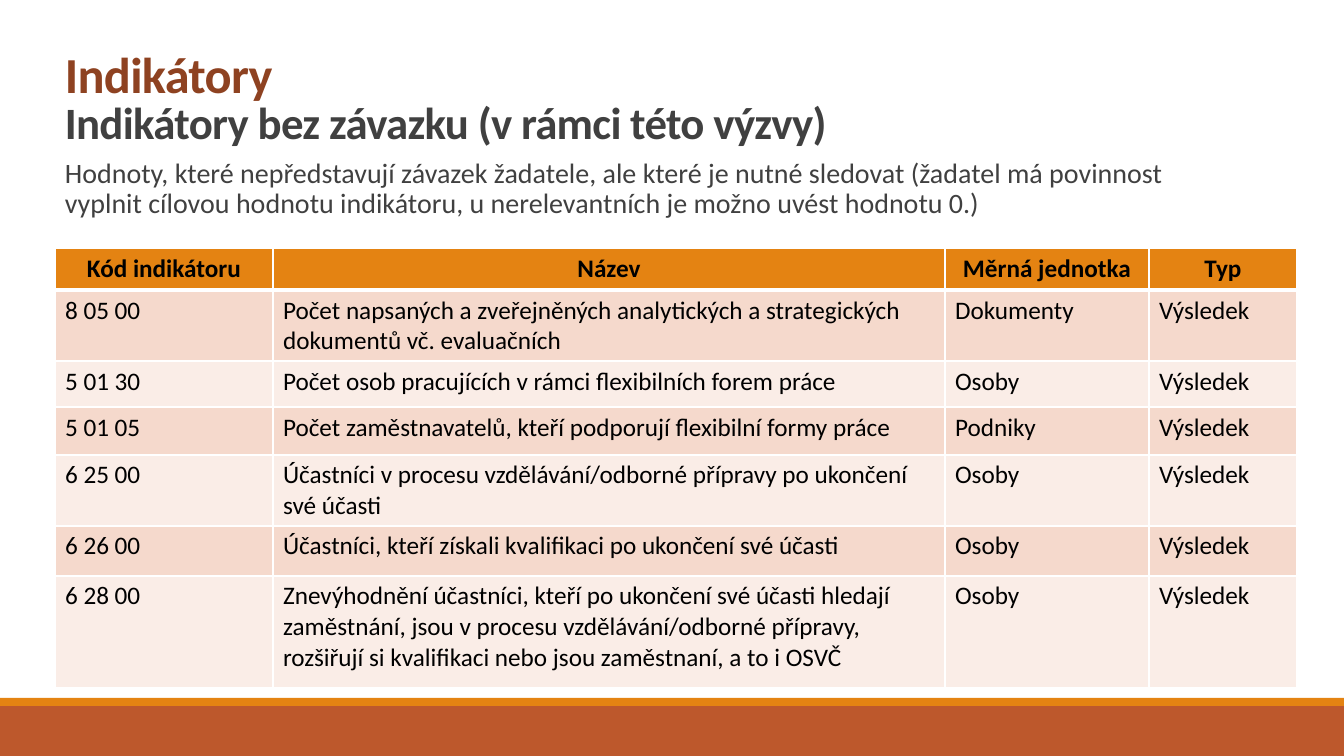
from dataclasses import dataclass
from lxml.etree import SubElement
from pptx import Presentation
from pptx.dml.color import RGBColor
from pptx.enum.shapes import MSO_SHAPE
from pptx.enum.text import MSO_ANCHOR, PP_ALIGN
from pptx.oxml.ns import qn
from pptx.util import Emu, Pt


@dataclass(frozen=True)
class Theme:
    font: str = "Calibri"
    band: str = "BD582C"
    accent: str = "E48312"
    title: str = "8E4221"
    text: str = "404040"
    ink: str = "000000"
    white: str = "FFFFFF"
    odd: str = "F5D9CC"
    even: str = "FAEDE7"
    title_size: int = 36
    sub_size: int = 32
    body_size: int = 20
    cell_size: int = 18


THEME = Theme()
WIDTHS = [218, 672, 204, 148]
HEIGHTS = [42, 71, 46, 48, 71, 50, 112]
ROWS = [
    ("Kód indikátoru", "Název", "Měrná jednotka", "Typ"),
    ("8 05 00", "Počet napsaných a zveřejněných analytických a strategických "
     "dokumentů vč. evaluačních", "Dokumenty", "Výsledek"),
    ("5 01 30", "Počet osob pracujících v rámci flexibilních forem práce",
     "Osoby", "Výsledek"),
    ("5 01 05", "Počet zaměstnavatelů, kteří podporují flexibilní formy práce",
     "Podniky", "Výsledek"),
    ("6 25 00", "Účastníci v procesu vzdělávání/odborné přípravy po ukončení "
     "své účasti", "Osoby", "Výsledek"),
    ("6 26 00", "Účastníci, kteří získali kvalifikaci po ukončení své účasti",
     "Osoby", "Výsledek"),
    ("6 28 00", "Znevýhodnění účastníci, kteří po ukončení své účasti hledají "
     "zaměstnání, jsou v procesu vzdělávání/odborné přípravy, rozšiřují si "
     "kvalifikaci nebo jsou zaměstnaní, a to i OSVČ", "Osoby", "Výsledek"),
]


def px(count):
    return Emu(round(count * 914400 / 100.8))


def color(code):
    return RGBColor.from_string(code)


def add_run(para, text, size, code, bold=False, track=0):
    run = para.add_run()
    run.text = text
    font = run.font
    font.name = THEME.font
    font.size = Pt(size)
    font.bold = bold
    font.color.rgb = color(code)
    if track:
        run._r.get_or_add_rPr().set("spc", str(track))


def add_bar(slide, top, height, code):
    bar = slide.shapes.add_shape(
        MSO_SHAPE.RECTANGLE, 0, px(top), px(1344), px(height))
    bar.shadow.inherit = False
    bar.fill.solid()
    bar.fill.fore_color.rgb = color(code)
    bar.line.fill.background()


def add_text(slide, top, width, height, anchor, spacing):
    box = slide.shapes.add_textbox(px(55), px(top), px(width), px(height))
    frame = box.text_frame
    frame.word_wrap = True
    frame.vertical_anchor = anchor
    para = frame.paragraphs[0]
    para.line_spacing = spacing
    return para


def add_edge(cell, side, points):
    props = cell._tc.get_or_add_tcPr()
    line = SubElement(props, qn(f"a:ln{side}"), w=str(Pt(points)))
    fill = SubElement(line, qn("a:solidFill"))
    SubElement(fill, qn("a:srgbClr"), val=THEME.white)


def fill_cell(cell, text, row):
    head = row == 0
    for side in "LRTB":
        thick = (head and side == "B") or (row == 1 and side == "T")
        add_edge(cell, side, 3 if thick else 1)
    cell.fill.solid()
    shade = THEME.odd if row % 2 else THEME.even
    cell.fill.fore_color.rgb = color(THEME.accent if head else shade)
    para = cell.text_frame.paragraphs[0]
    para.alignment = PP_ALIGN.CENTER if head else PP_ALIGN.LEFT
    add_run(para, text, THEME.cell_size, THEME.ink, head)


def add_grid(slide):
    grid = slide.shapes.add_table(
        len(ROWS), len(WIDTHS), px(55), px(248),
        px(sum(WIDTHS)), px(sum(HEIGHTS))).table
    grid.horz_banding = False
    for col, width in zip(grid.columns, WIDTHS):
        col.width = px(width)
    for row, height in zip(grid.rows, HEIGHTS):
        row.height = px(height)
    for row, texts in enumerate(ROWS):
        for col, text in enumerate(texts):
            fill_cell(grid.cell(row, col), text, row)


def main():
    deck = Presentation()
    deck.slide_width, deck.slide_height = px(1344), px(756)
    slide = deck.slides.add_slide(deck.slide_layouts[6])
    add_bar(slide, 706, 50, THEME.band)
    add_bar(slide, 698, 8, THEME.accent)
    title = add_text(slide, 44, 1105, 110, MSO_ANCHOR.BOTTOM, 0.85)
    add_run(title, "Indikátory", THEME.title_size, THEME.title, True, -50)
    title.add_line_break()
    add_run(title, "Indikátory bez závazku (v rámci této výzvy)",
            THEME.sub_size, THEME.text, True, -50)
    body = add_text(slide, 154, 1145, 93, MSO_ANCHOR.TOP, 0.9)
    add_run(body, "Hodnoty, které nepředstavují závazek žadatele, ale které "
            "je nutné sledovat (žadatel má povinnost vyplnit cílovou hodnotu "
            "indikátoru, u nerelevantních je možno uvést hodnotu 0.)",
            THEME.body_size, THEME.text)
    add_grid(slide)
    deck.save("out.pptx")


if __name__ == "__main__":
    main()
